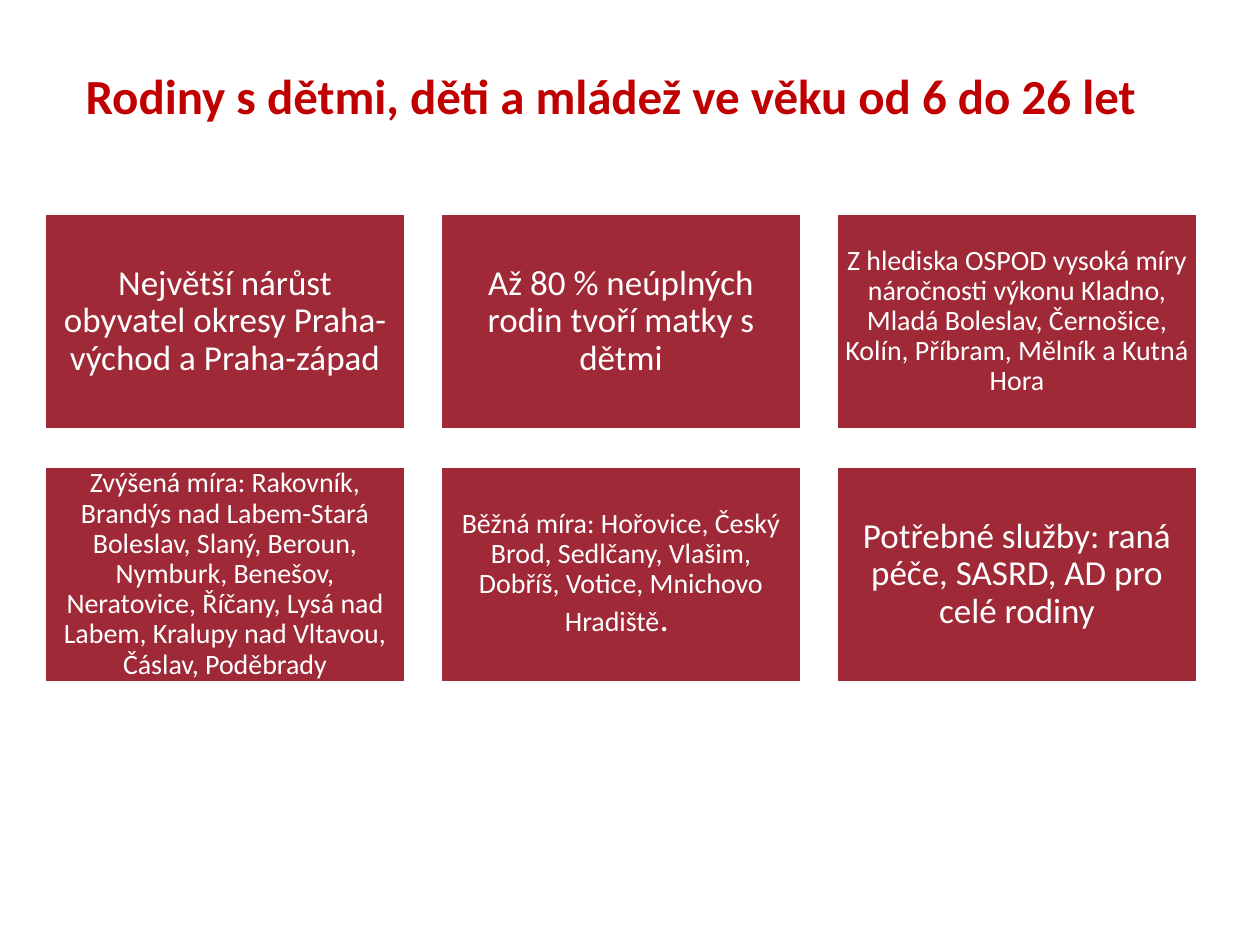
from pptx import Presentation
from pptx.dml.color import RGBColor
from pptx.enum.shapes import MSO_SHAPE as Shape
from pptx.enum.text import MSO_ANCHOR as Anchor, PP_ALIGN as Align
from pptx.util import Emu, Pt

PX_PER_INCH = 126
FONT = "Calibri"
COLORS = {"title": "C00000", "card": "9F2936", "white": "FFFFFF"}

# Card grid, in px
COLUMNS = 3
LEFT, TOP = 45, 214
CARD_WIDTH, CARD_HEIGHT = 360, 215
STEP_X, STEP_Y = 396, 253

# Each card is a list of (text, size in points)
CARDS = [
    [("Největší nárůst obyvatel okresy Praha-východ a Praha-západ", 20)],
    [("Až 80 % neúplných rodin tvoří matky s dětmi", 20)],
    [("Z hlediska OSPOD vysoká míry náročnosti výkonu Kladno, Mladá Boleslav, "
      "Černošice, Kolín, Příbram, Mělník a Kutná Hora", 16)],
    [("Zvýšená míra: Rakovník, Brandýs nad Labem-Stará Boleslav, Slaný, "
      "Beroun, Nymburk, Benešov, Neratovice, Říčany, Lysá nad Labem, "
      "Kralupy nad Vltavou, Čáslav, Poděbrady", 16)],
    [("Běžná míra: Hořovice, Český Brod, Sedlčany, Vlašim, Dobříš, Votice, "
      "Mnichovo Hradiště", 16), (". ", 21)],
    [("Potřebné služby: raná péče, SASRD, AD pro celé rodiny", 20)],
]


def px(length):
    return Emu(round(length * 914400 / PX_PER_INCH))


def color(name):
    return RGBColor.from_string(COLORS[name])


def write_spans(frame, spans, color_name, bold=False):
    frame.word_wrap = True
    para = frame.paragraphs[0]
    para.alignment = Align.CENTER
    para.line_spacing = 0.9
    for text, size in spans:
        span = para.add_run()
        span.text = text
        span.font.name = FONT
        span.font.size = Pt(size)
        span.font.bold = bold
        span.font.color.rgb = color(color_name)


def add_title(page, text):
    box = page.shapes.add_textbox(px(35), px(66), px(1162), px(128))
    box.text_frame.vertical_anchor = Anchor.TOP
    write_spans(box.text_frame, [(text, 28)], "title", bold=True)


def add_card(page, left, top, spans):
    card = page.shapes.add_shape(
        Shape.RECTANGLE, px(left), px(top), px(CARD_WIDTH), px(CARD_HEIGHT))
    card.shadow.inherit = False
    card.fill.solid()
    card.fill.fore_color.rgb = color("card")
    card.line.color.rgb = color("white")
    card.line.width = Pt(1)

    # The inset grows with the text size
    frame = card.text_frame
    inset = px(10 if spans[0][1] == 20 else 8)
    frame.margin_left = frame.margin_right = inset
    frame.margin_top = frame.margin_bottom = inset
    frame.vertical_anchor = Anchor.MIDDLE
    write_spans(frame, spans, "white")


def main():
    deck = Presentation()
    deck.slide_width, deck.slide_height = px(1260), px(945)
    page = deck.slides.add_slide(deck.slide_layouts[6])

    add_title(page, "Rodiny s dětmi, děti a mládež ve věku od 6 do 26 let ")
    for index, spans in enumerate(CARDS):
        row, column = divmod(index, COLUMNS)
        add_card(page, LEFT + column * STEP_X, TOP + row * STEP_Y, spans)

    deck.save("out.pptx")


if __name__ == "__main__":
    main()
